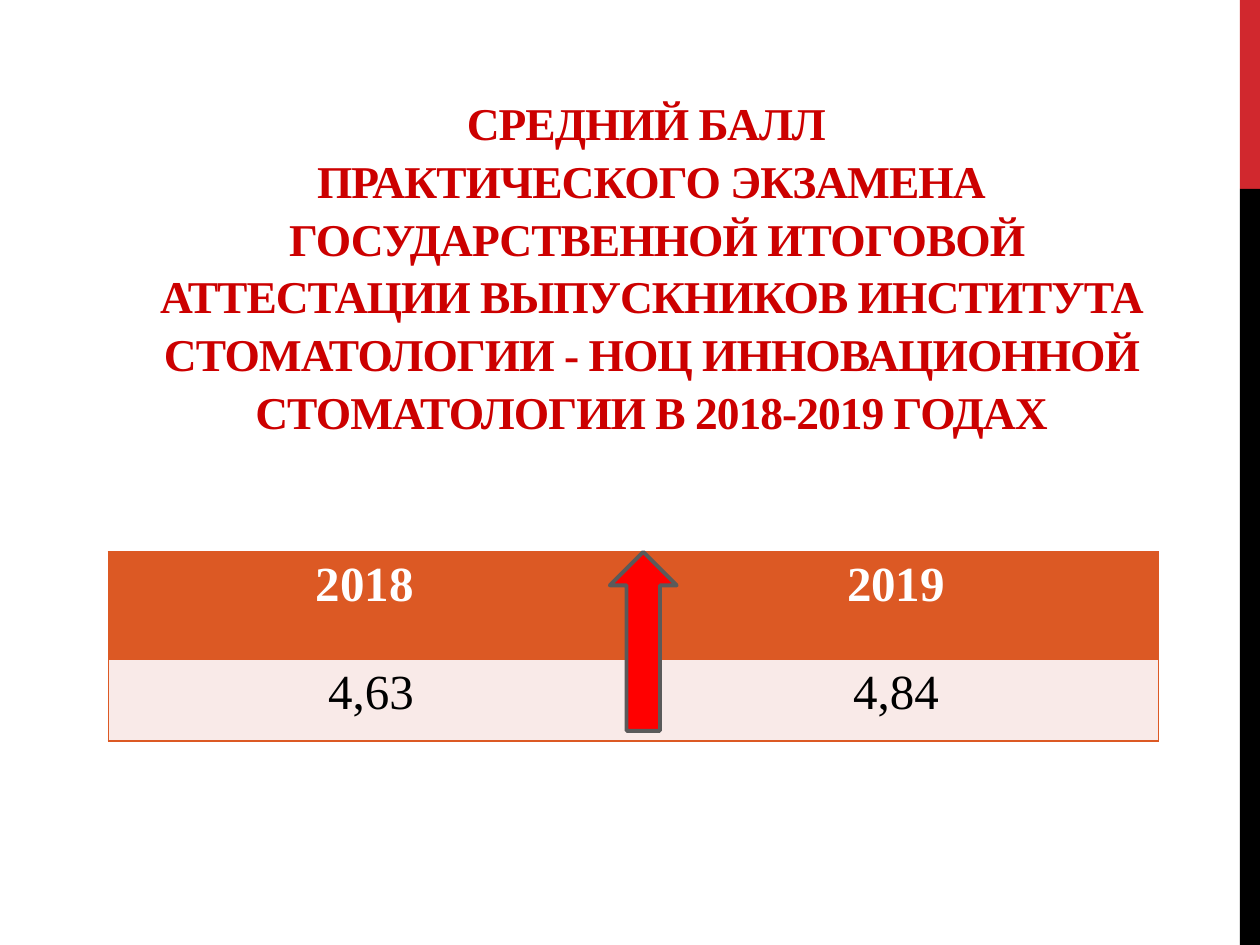
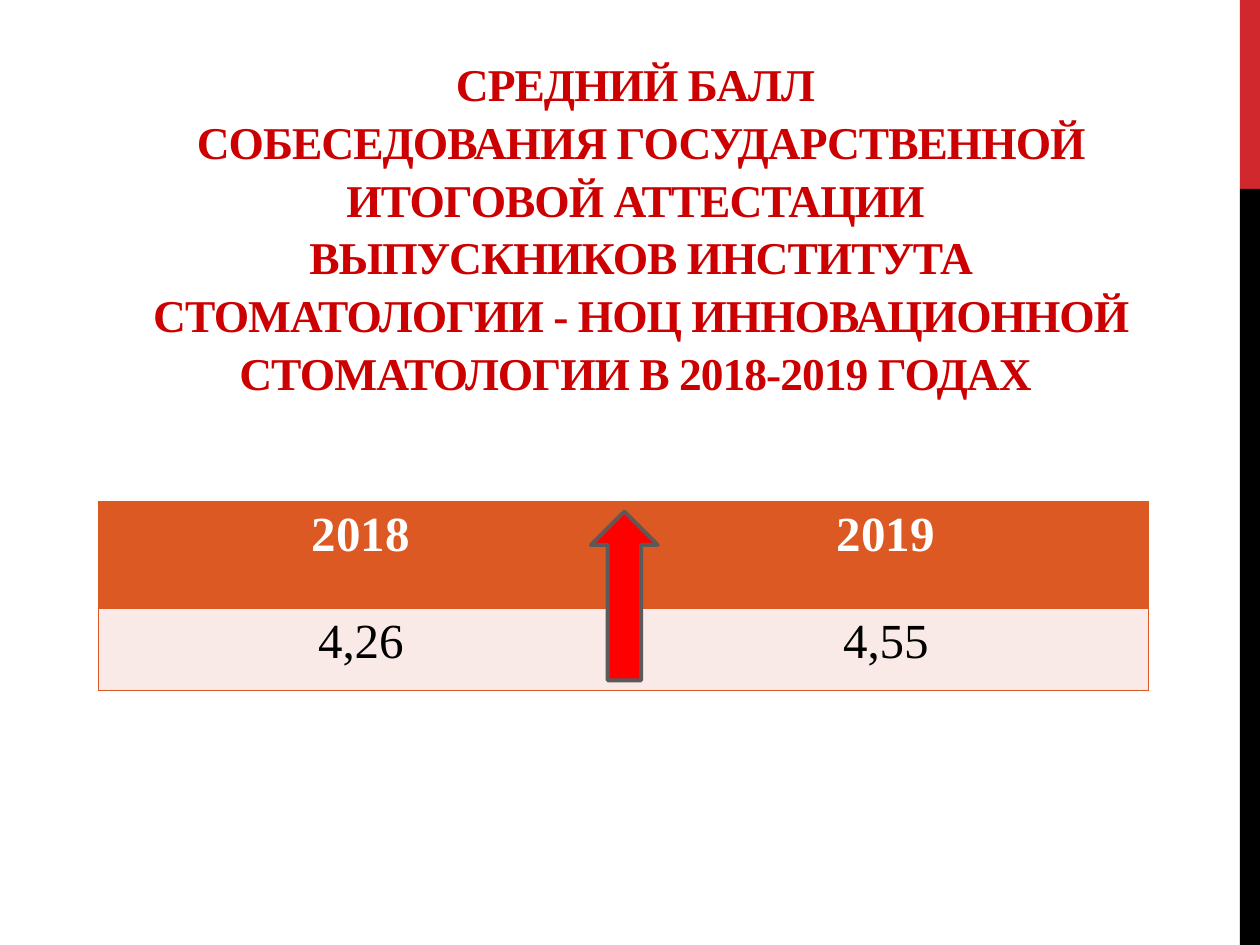
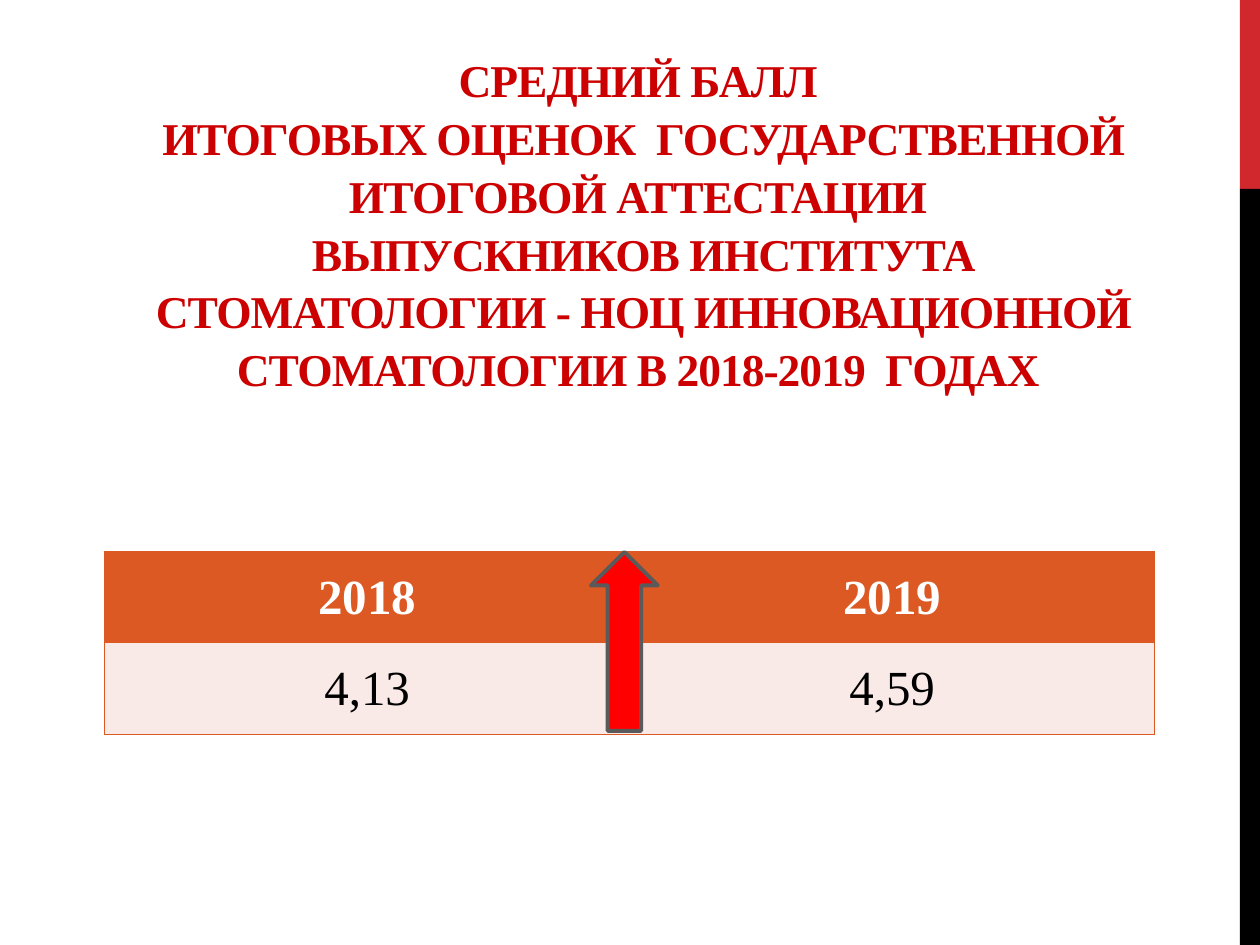
from dataclasses import dataclass

from lxml import etree
from pptx import Presentation
from pptx.dml.color import RGBColor
from pptx.enum.shapes import MSO_SHAPE
from pptx.enum.text import MSO_ANCHOR, MSO_AUTO_SIZE, PP_ALIGN
from pptx.oxml.ns import qn
from pptx.presentation import Presentation as Deck
from pptx.shapes.autoshape import Shape
from pptx.slide import Slide
from pptx.table import _Cell as Cell
from pptx.text.text import _Paragraph as Paragraph
from pptx.util import Pt

RECTANGLE = MSO_SHAPE.RECTANGLE
UP_ARROW = MSO_SHAPE.UP_ARROW
TOP, MIDDLE, BOTTOM = MSO_ANCHOR.TOP, MSO_ANCHOR.MIDDLE, MSO_ANCHOR.BOTTOM
CENTER = PP_ALIGN.CENTER

COLORS = {
    "title": "CC0000",
    "band_red": "D1282E",
    "band_black": "000000",
    "header": "DC5924",
    "header_text": "FFFFFF",
    "score": "F9EAE8",
    "score_text": "000000",
    "arrow": "FF0000",
    "arrow_line": "5A5A5A",
}
FONT = "Times New Roman"
PLAIN_TABLE_STYLE = "{2D5ABB26-0587-4C30-8999-92F81FD0307C}"
TITLE_ONLY = 5
COLUMN_WIDTH = 300
ARROW_WIDTH = 38.2


@dataclass(frozen=True)
class Area:
    left: float
    top: float
    width: float
    height: float

    def lengths(self) -> tuple[Pt, Pt, Pt, Pt]:
        return Pt(self.left), Pt(self.top), Pt(self.width), Pt(self.height)


@dataclass(frozen=True)
class ScorePage:
    title: str
    title_area: Area
    years: tuple[str, str]
    scores: tuple[str, str]
    table_left: float
    table_top: float
    row_heights: tuple[float, float]
    anchor: MSO_ANCHOR
    arrow_area: Area


BANDS = (
    (Area(708.5, 0, 11.5, 108), "band_red"),
    (Area(708.5, 108, 11.5, 432), "band_black"),
)

PAGES = (
    ScorePage(
        "СРЕДНИЙ БАЛЛ \nПРАКТИЧЕСКОГО ЭКЗАМЕНА\n ГОСУДАРСТВЕННОЙ ИТОГОВОЙ "
        "АТТЕСТАЦИИ ВЫПУСКНИКОВ ИНСТИТУТА СТОМАТОЛОГИИ - НОЦ ИННОВАЦИОННОЙ "
        "СТОМАТОЛОГИИ В 2018-2019 ГОДАХ",
        Area(73.5, 123.8, 597.6, 130.3),
        ("2018 ", "2019"), ("4,63", "4,84"),
        62, 315.4, (61.7, 46.3), TOP,
        Area(348.5, 315.4, ARROW_WIDTH, 102.2),
    ),
    ScorePage(
        "СРЕДНИЙ БАЛЛ \nСОБЕСЕДОВАНИЯ ГОСУДАРСТВЕННОЙ ИТОГОВОЙ АТТЕСТАЦИИ \n"
        "ВЫПУСКНИКОВ ИНСТИТУТА СТОМАТОЛОГИИ - НОЦ ИННОВАЦИОННОЙ "
        "СТОМАТОЛОГИИ В 2018-2019 ГОДАХ ",
        Area(78.5, 118, 575.3, 113.8),
        ("2018", "2019"), ("4,26", "4,55"),
        56.2, 286.6, (61.2, 46.8), TOP,
        Area(337.7, 292.3, ARROW_WIDTH, 96.5),
    ),
    ScorePage(
        "СРЕДНИЙ БАЛЛ \nИТОГОВЫХ ОЦЕНОК  ГОСУДАРСТВЕННОЙ ИТОГОВОЙ АТТЕСТАЦИИ \n"
        "ВЫПУСКНИКОВ ИНСТИТУТА СТОМАТОЛОГИИ - НОЦ ИННОВАЦИОННОЙ "
        "СТОМАТОЛОГИИ В 2018-2019  ГОДАХ ",
        Area(78.5, 146.2, 578.2, 83.5),
        ("2018", "2019"), ("4,13", "4,59"),
        59.8, 315.4, (52.2, 52.2), MIDDLE,
        Area(337.7, 315.4, ARROW_WIDTH, 102.2),
    ),
)


def rgb(name: str) -> RGBColor:
    return RGBColor.from_string(COLORS[name])


def format_paragraph(paragraph: Paragraph, size: float, color: str, bold: bool) -> None:
    paragraph.alignment = CENTER
    font = paragraph.font
    font.name, font.size, font.bold = FONT, Pt(size), bold
    font.color.rgb = rgb(color)


def add_filled_shape(page: Slide, kind: MSO_SHAPE, area: Area, color: str) -> Shape:
    shape = page.shapes.add_shape(kind, *area.lengths())
    shape.shadow.inherit = False
    shape.fill.solid()
    shape.fill.fore_color.rgb = rgb(color)
    shape.line.fill.background()
    return shape


def add_master_bands(deck: Deck, page: Slide) -> None:
    """Draw the side bands on a page, then move them to the slide master."""
    for number, (area, color) in enumerate(BANDS, start=101):
        band = add_filled_shape(page, RECTANGLE, area, color).element
        band.nvSpPr.cNvPr.set("id", str(number))
        deck.slide_master.shapes.element.append(band)


def write_title(page: Slide, content: ScorePage) -> None:
    box = page.shapes.title
    box.left, box.top, box.width, box.height = content.title_area.lengths()
    frame = box.text_frame
    frame.word_wrap = True
    frame.auto_size = MSO_AUTO_SIZE.NONE
    frame.vertical_anchor = BOTTOM
    paragraph = frame.paragraphs[0]
    paragraph.text = content.title
    paragraph.line_spacing = Pt(33)
    format_paragraph(paragraph, 26, "title", True)
    for properties in box.element.iter(qn("a:defRPr")):
        properties.set("spc", "-60")


def add_border(cell: Cell, side: str) -> None:
    properties = cell._tc.get_or_add_tcPr()
    line = etree.SubElement(properties, qn(f"a:ln{side}"), w=str(Pt(1)))
    fill = etree.SubElement(line, qn("a:solidFill"))
    etree.SubElement(fill, qn("a:srgbClr"), val=COLORS["header"])


def add_score_table(page: Slide, content: ScorePage) -> None:
    area = Area(content.table_left, content.table_top,
                2 * COLUMN_WIDTH, sum(content.row_heights))
    holder = page.shapes.add_table(2, 2, *area.lengths())
    for style in holder.element.iter(qn("a:tableStyleId")):
        style.text = PLAIN_TABLE_STYLE
    table = holder.table
    table.horz_banding = False
    for column in table.columns:
        column.width = Pt(COLUMN_WIDTH)

    rows = ((content.years, "header"), (content.scores, "score"))
    for row, (texts, style_name) in enumerate(rows):
        table.rows[row].height = Pt(content.row_heights[row])
        for column, text in enumerate(texts):
            cell = table.cell(row, column)
            cell.vertical_anchor = content.anchor
            add_border(cell, "LR"[column])
            add_border(cell, "TB"[row])
            cell.fill.solid()
            cell.fill.fore_color.rgb = rgb(style_name)
            paragraph = cell.text_frame.paragraphs[0]
            paragraph.text = text
            format_paragraph(paragraph, 28, f"{style_name}_text", row == 0)


def add_growth_arrow(page: Slide, area: Area) -> None:
    arrow = add_filled_shape(page, UP_ARROW, area, "arrow")
    arrow.line.color.rgb = rgb("arrow_line")
    arrow.line.width = Pt(2.25)


def main() -> None:
    deck = Presentation()
    deck.slide_width, deck.slide_height = Pt(720), Pt(540)
    for number, content in enumerate(PAGES):
        page = deck.slides.add_slide(deck.slide_layouts[TITLE_ONLY])
        if number == 0:
            add_master_bands(deck, page)
        write_title(page, content)
        add_score_table(page, content)
        add_growth_arrow(page, content.arrow_area)
    deck.save("out.pptx")


if __name__ == "__main__":
    main()
